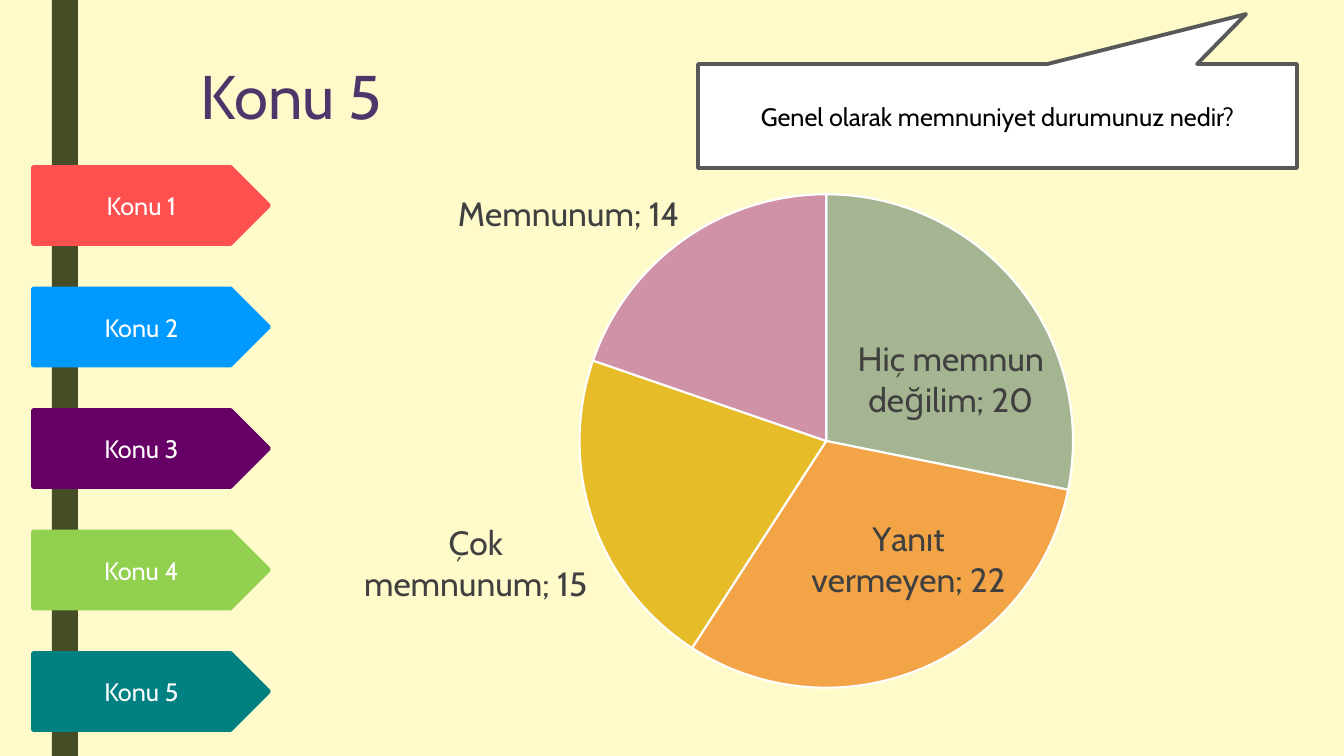
from lxml.etree import SubElement
from pptx import Presentation
from pptx.chart.data import CategoryChartData
from pptx.dml.color import RGBColor
from pptx.enum.chart import XL_CHART_TYPE, XL_LABEL_POSITION
from pptx.enum.shapes import MSO_SHAPE
from pptx.enum.text import MSO_ANCHOR, PP_ALIGN
from pptx.oxml import parse_xml
from pptx.oxml.ns import nsdecls, qn
from pptx.util import Pt

EMU_PER_PX = 914400 / 100.8
FONT = "Cabin"
CREAM = RGBColor(0xFE, 0xFA, 0xC9)
OLIVE = RGBColor(0x44, 0x4D, 0x26)
VIOLET = RGBColor(0x4C, 0x37, 0x6B)
WHITE = RGBColor(0xFF, 0xFF, 0xFF)
BLACK = RGBColor(0x00, 0x00, 0x00)
GRAY = RGBColor(0x59, 0x59, 0x59)
DARK_GRAY = RGBColor(0x40, 0x40, 0x40)
TOPICS = [
    ("Konu 1", RGBColor(0xFF, 0x50, 0x50)),
    ("Konu 2", RGBColor(0x00, 0x99, 0xFF)),
    ("Konu 3", RGBColor(0x66, 0x00, 0x66)),
    ("Konu 4", RGBColor(0x92, 0xD0, 0x50)),
    ("Konu 5", RGBColor(0x00, 0x80, 0x80)),
]
ANSWERS = [
    ("Hiç memnun değilim", 20, RGBColor(0xA5, 0xB5, 0x92)),
    ("Yanıt vermeyen", 22, RGBColor(0xF3, 0xA4, 0x47)),
    ("Çok memnunum", 15, RGBColor(0xE7, 0xBC, 0x29)),
    ("Memnunum", 14, RGBColor(0xD0, 0x92, 0xA7)),
]


def px(*lengths):
    return [round(length * EMU_PER_PX) for length in lengths]


def set_font(font, size, color):
    font.name = FONT
    font.size = Pt(size)
    font.color.rgb = color


def add_box(slide, preset, box, fill, line=None, text="", color=WHITE):
    shape = slide.shapes.add_shape(preset, *px(*box))
    shape.shadow.inherit = False
    shape.fill.solid()
    shape.fill.fore_color.rgb = fill
    if line is None:
        shape.line.fill.background()
    else:
        shape.line.color.rgb = line
        shape.line.width = Pt(2.75)
    if text:
        shape.text_frame.word_wrap = True
        shape.text_frame.vertical_anchor = MSO_ANCHOR.MIDDLE
        paragraph = shape.text_frame.paragraphs[0]
        paragraph.text = text
        paragraph.alignment = PP_ALIGN.CENTER
        set_font(paragraph.font, 18, color)
    return shape


def add_title(slide, box, text):
    frame = slide.shapes.add_textbox(*px(*box)).text_frame
    frame.word_wrap = True
    paragraph = frame.paragraphs[0]
    paragraph.text = text
    paragraph.line_spacing = 0.89
    set_font(paragraph.font, 44, VIOLET)


def add_topic_tabs(slide, left, top, width, height, tab_height):
    step = (height - tab_height) / (len(TOPICS) - 1)
    for index, (name, color) in enumerate(TOPICS):
        box = (left, top + index * step, width, tab_height)
        add_box(slide, MSO_SHAPE.PENTAGON, box, color, color, name)


def add_question(slide, box, text):
    callout = add_box(slide, MSO_SHAPE.RECTANGULAR_CALLOUT, box, WHITE, GRAY, text, BLACK)
    callout.adjustments[0] = 0.415
    callout.adjustments[1] = -0.98


def set_plot_box(chart, x, y, width, height):
    plot_area = chart.plots[0]._element.getparent()
    for layout in plot_area.findall(qn("c:layout")):
        plot_area.remove(layout)
    plot_area.insert(0, parse_xml(
        f'<c:layout {nsdecls("c")}><c:manualLayout><c:layoutTarget val="inner"/>'
        '<c:xMode val="edge"/><c:yMode val="edge"/>'
        f'<c:x val="{x:.3f}"/><c:y val="{y:.3f}"/>'
        f'<c:w val="{width:.3f}"/><c:h val="{height:.3f}"/>'
        '</c:manualLayout></c:layout>'))


def add_answer_pie(slide, left, top, width, height, diameter):
    data = CategoryChartData()
    data.categories = [answer for answer, _, _ in ANSWERS]
    data.add_series("Series 1", [count for _, count, _ in ANSWERS])
    box = px(left, top, width, height)
    chart = slide.shapes.add_chart(XL_CHART_TYPE.PIE, *box, data).chart
    chart.has_legend = False
    chart.has_title = False
    set_font(chart.font, 10, BLACK)
    set_plot_box(chart, (579 - left) / width, (194 - top) / height,
                 diameter / width, diameter / height)
    plot = chart.plots[0]
    plot.vary_by_categories = True
    series = plot.series[0]
    for index, (_, _, color) in enumerate(ANSWERS):
        slice_format = series.points[index].format
        slice_format.fill.solid()
        slice_format.fill.fore_color.rgb = color
        slice_format.line.color.rgb = WHITE
        slice_format.line.width = Pt(1.5)
    labels = series.data_labels
    labels.show_value = True
    labels.show_category_name = True
    labels.position = XL_LABEL_POSITION.BEST_FIT
    set_font(labels.font, 24, DARK_GRAY)
    separator = SubElement(labels._element, qn("c:separator"))
    separator.text = "; "
    labels._element.find(qn("c:showBubbleSize")).addnext(separator)


def build_topic_slide(presentation):
    slide = presentation.slides.add_slide(presentation.slide_layouts[6])
    slide.background.fill.solid()
    slide.background.fill.fore_color.rgb = CREAM
    add_box(slide, MSO_SHAPE.RECTANGLE, (52, 0, 26, 756), OLIVE)
    add_title(slide, (191, 62, 1058, 163), "Konu 5")
    add_answer_pie(slide, 191, 145, 1153, 611, 494)
    add_topic_tabs(slide, 33, 167, 236, 563, 77)
    add_question(slide, (698, 64, 599, 104), "Genel olarak memnuniyet durumunuz nedir?")


def main():
    presentation = Presentation()
    presentation.slide_width, presentation.slide_height = px(1344, 756)
    build_topic_slide(presentation)
    presentation.save("out.pptx")


if __name__ == "__main__":
    main()
